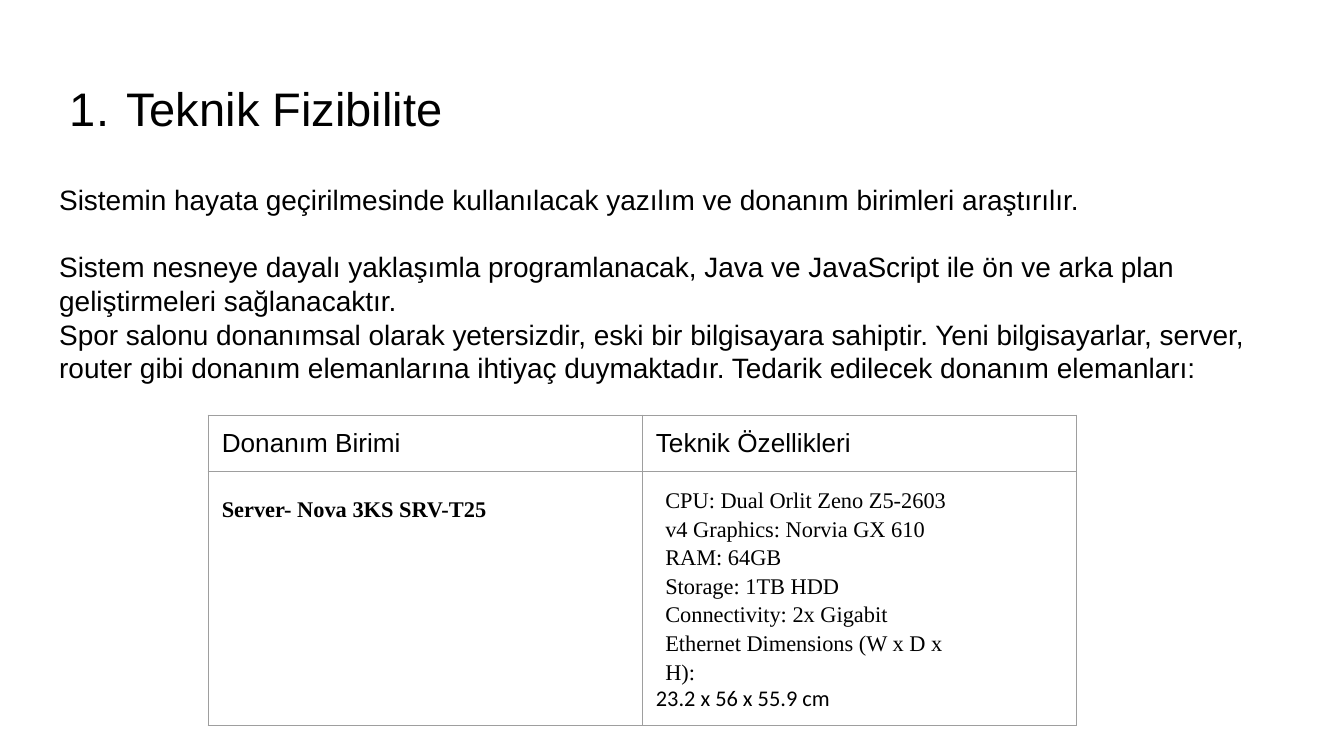
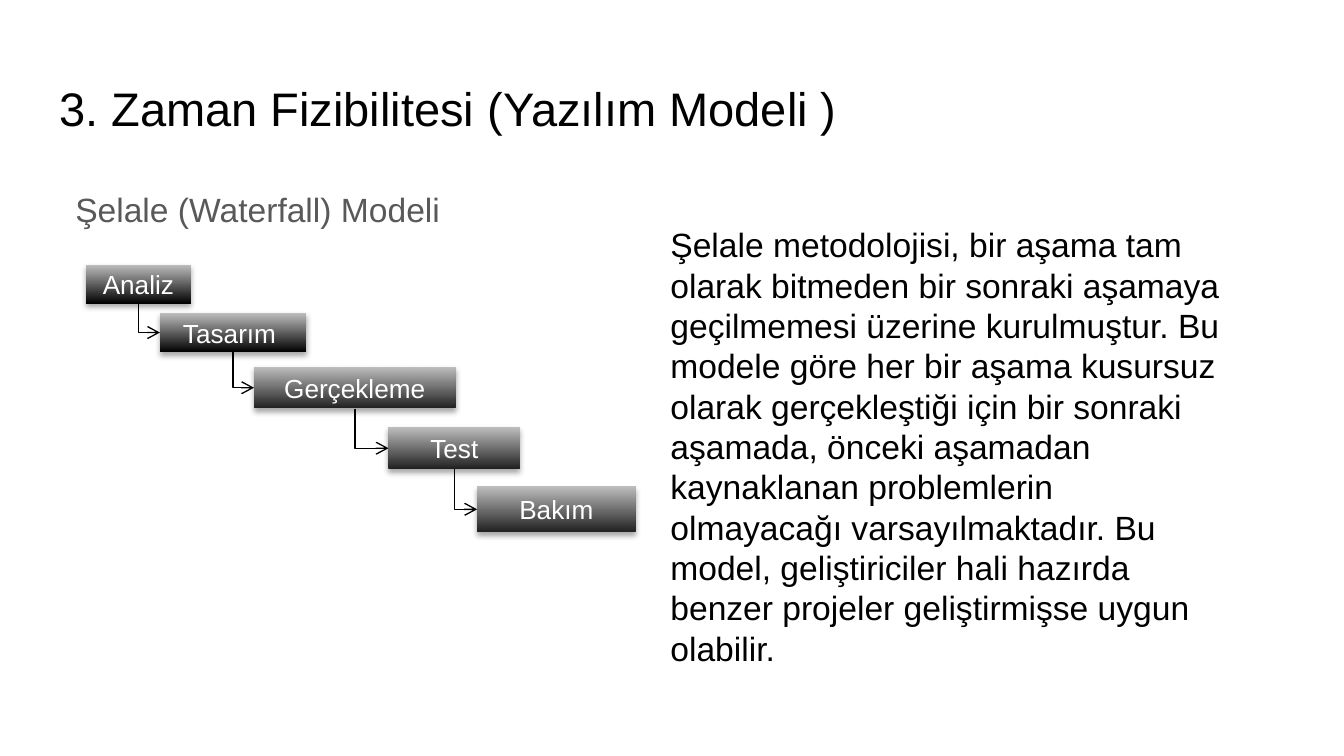
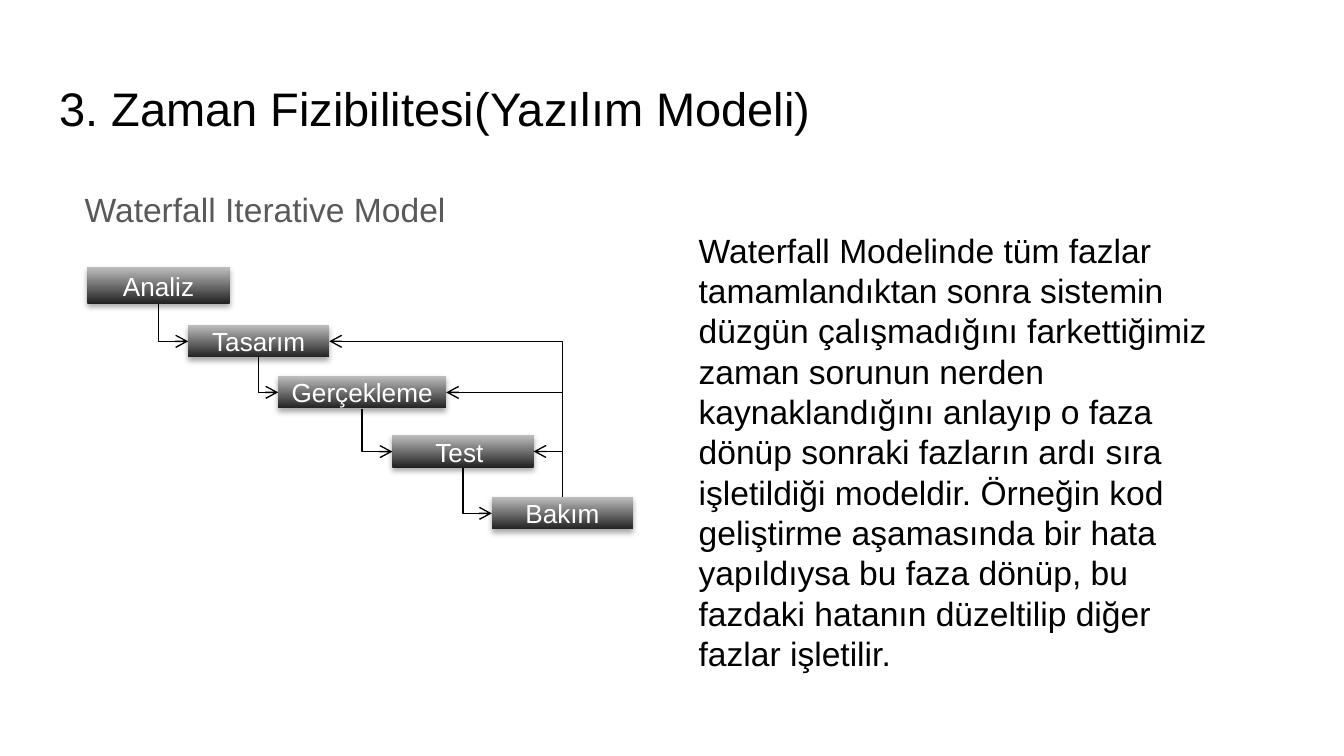
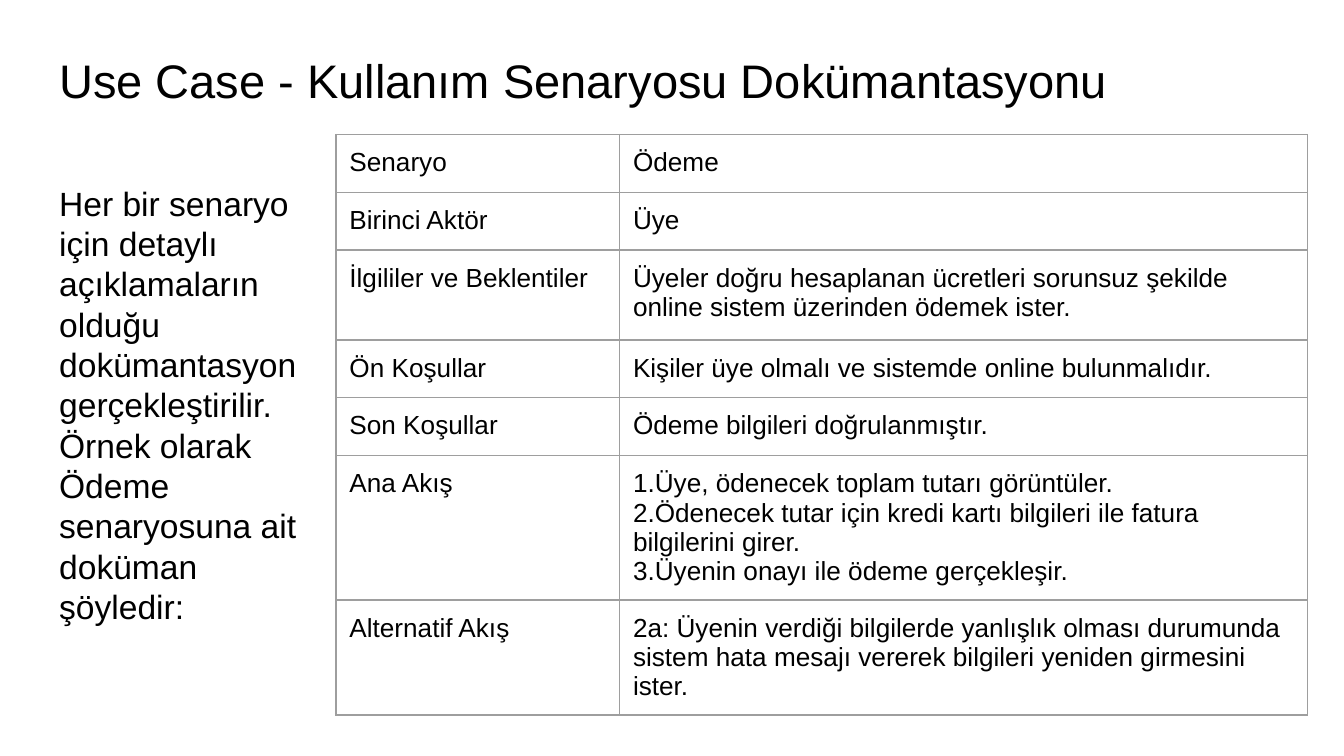
from dataclasses import dataclass
from typing import NamedTuple

from lxml import etree
from pptx import Presentation
from pptx.dml.color import RGBColor
from pptx.enum.shapes import MSO_CONNECTOR, MSO_SHAPE
from pptx.enum.text import MSO_ANCHOR, MSO_AUTO_SIZE, PP_ALIGN
from pptx.oxml.ns import qn
from pptx.util import Emu, Inches, Pt

ELBOW = MSO_CONNECTOR.ELBOW
RECTANGLE = MSO_SHAPE.RECTANGLE
TOP, MIDDLE = MSO_ANCHOR.TOP, MSO_ANCHOR.MIDDLE
NO_FIT, GROW = MSO_AUTO_SIZE.NONE, MSO_AUTO_SIZE.SHAPE_TO_FIT_TEXT
LEFT, CENTER, JUSTIFY = PP_ALIGN.LEFT, PP_ALIGN.CENTER, PP_ALIGN.JUSTIFY

COLORS = {
    "background": "FFFFFF",
    "text": "000000",
    "subtitle": "595959",
    "phase_text": "FFFFFF",
    "black": "000000",
    "charcoal": "212121",
    "silver": "BDBDBD",
    "border": "9E9E9E",
}
SANS, SERIF, CALIBRI = "Arial", "Times New Roman", "Calibri"
TITLE_AND_CONTENT = 1
TOP_SITE, LEFT_SITE, BOTTOM_SITE, RIGHT_SITE = range(4)
SLIDE_WIDTH = Inches(10)
SLIDE_HEIGHT = Emu(SLIDE_WIDTH * 9 // 16)
LINE_WIDTH = Pt(0.75)
INSET = Inches(0.1)


class Area(NamedTuple):
    left: float
    top: float
    width: float
    height: float

    def lengths(self) -> list:
        return [Inches(value) for value in self]


@dataclass
class Style:
    size: float
    font: str = SANS
    color: str = "text"
    bold: bool = False
    align: PP_ALIGN = LEFT
    spacing: float | None = None
    indent: float = 0
    right_indent: float = 0


@dataclass
class Phase:
    label: str
    area: Area
    shade: str = "charcoal"


TITLE_AREA = Area(0.34, 0.49, 9.32, 0.63)
BODY_AREA = Area(0.34, 1.26, 9.32, 3.74)

TITLE = Style(25.2)
INTRO = Style(15)
LARGE = Style(18)
SUBTITLE = Style(18, color="subtitle", spacing=1.15, indent=0.12)
CELL = Style(14)
PHASE = Style(14, color="phase_text", align=CENTER)
DEVICE = Style(12, SERIF, bold=True, align=JUSTIFY, spacing=1.5)
FEATURE = Style(12, SERIF, spacing=1.15, indent=0.07, right_indent=0.77)
DIMENSIONS = Style(12, CALIBRI)

INTRO_TEXT = [
    "Sistemin hayata geçirilmesinde kullanılacak yazılım ve donanım birimleri araştırılır.",
    "Sistem nesneye dayalı yaklaşımla programlanacak, Java ve JavaScript ile ön ve arka "
    "plan geliştirmeleri sağlanacaktır.",
    "Spor salonu donanımsal olarak yetersizdir, eski bir bilgisayara sahiptir. Yeni "
    "bilgisayarlar, server, router gibi donanım elemanlarına ihtiyaç duymaktadır. Tedarik "
    "edilecek donanım elemanları:",
]
HARDWARE = [
    ["Donanım Birimi", "Teknik Özellikleri"],
    [
        "Server- Nova 3KS SRV-T25",
        "CPU: Dual Orlit Zeno Z5-2603 v4 Graphics: Norvia GX 610\n"
        "RAM: 64GB\n"
        "Storage: 1TB HDD\n"
        "Connectivity: 2x Gigabit Ethernet Dimensions (W x D x H):\n"
        "23.2 x 56 x 55.9 cm",
    ],
]
WATERFALL_TEXT = (
    "Şelale metodolojisi, bir aşama tam olarak bitmeden bir sonraki aşamaya geçilmemesi "
    "üzerine kurulmuştur. Bu modele göre her bir aşama kusursuz olarak gerçekleştiği için "
    "bir sonraki aşamada, önceki aşamadan kaynaklanan problemlerin olmayacağı "
    "varsayılmaktadır. Bu model, geliştiriciler hali hazırda benzer projeler geliştirmişse "
    "uygun olabilir."
)
WATERFALL_PHASES = [
    Phase("Analiz", Area(0.64, 1.97, 0.78, 0.29), "black"),
    Phase("Tasarım ", Area(1.19, 2.33, 1.09, 0.29), "black"),
    Phase("Gerçekleme", Area(1.89, 2.73, 1.5, 0.31)),
    Phase("Test", Area(2.89, 3.18, 0.98, 0.31)),
    Phase("Bakım", Area(3.55, 3.62, 1.18, 0.34)),
]
ITERATIVE_TEXT = (
    "Waterfall Modelinde tüm fazlar tamamlandıktan sonra sistemin düzgün çalışmadığını "
    "farkettiğimiz zaman sorunun nerden kaynaklandığını anlayıp o faza dönüp sonraki "
    "fazların ardı sıra işletildiği modeldir. Örneğin kod geliştirme aşamasında bir hata "
    "yapıldıysa bu faza dönüp, bu fazdaki hatanın düzeltilip diğer fazlar işletilir."
)
ITERATIVE_PHASES = [
    Phase("Analiz", Area(0.65, 1.99, 1.06, 0.27)),
    Phase("Tasarım", Area(1.4, 2.42, 1.05, 0.24)),
    Phase("Gerçekleme", Area(2.07, 2.8, 1.25, 0.24)),
    Phase("Test ", Area(2.92, 3.24, 1.05, 0.24)),
    Phase("Bakım", Area(3.66, 3.7, 1.05, 0.24)),
]
SCENARIO_TEXT = [
    "Her bir senaryo için detaylı açıklamaların olduğu dokümantasyon gerçekleştirilir.",
    "Örnek olarak Ödeme senaryosuna ait doküman şöyledir:",
]
SCENARIO = [
    ["Senaryo", "Ödeme"],
    ["Birinci Aktör", "Üye"],
    ["İlgililer ve Beklentiler",
     "Üyeler doğru hesaplanan ücretleri sorunsuz şekilde online sistem üzerinden ödemek "
     "ister."],
    ["Ön Koşullar", "Kişiler üye olmalı ve sistemde online bulunmalıdır."],
    ["Son Koşullar", "Ödeme bilgileri doğrulanmıştır."],
    ["Ana Akış",
     "1.Üye, ödenecek toplam tutarı görüntüler.\n"
     "2.Ödenecek tutar için kredi kartı bilgileri ile fatura bilgilerini girer.\n"
     "3.Üyenin onayı ile ödeme gerçekleşir."],
    ["Alternatif Akış",
     "2a: Üyenin verdiği bilgilerde yanlışlık olması durumunda sistem hata mesajı vererek "
     "bilgileri yeniden girmesini ister."],
]


def rgb(name: str) -> RGBColor:
    return RGBColor.from_string(COLORS[name])


def add_xml(parent, tag: str, **attributes):
    return etree.SubElement(parent, qn(tag), {k: str(v) for k, v in attributes.items()})


def format_paragraph(paragraph, style: Style) -> None:
    paragraph.alignment = style.align
    paragraph.space_before = Pt(0)
    if style.spacing:
        paragraph.line_spacing = style.spacing
    properties = paragraph._p.get_or_add_pPr()
    properties.set("marL", str(Inches(style.indent)))
    properties.set("marR", str(Inches(style.right_indent)))
    properties.set("indent", "0")
    for run in paragraph.runs:
        run.font.size = Pt(style.size)
        run.font.name = style.font
        run.font.bold = style.bold
        run.font.color.rgb = rgb(style.color)


def write(frame, text: str, style: Style) -> None:
    frame.text = text
    for paragraph in frame.paragraphs:
        format_paragraph(paragraph, style)


def fill_placeholder(placeholder, area: Area, text: str, style: Style) -> None:
    placeholder.left, placeholder.top, placeholder.width, placeholder.height = area.lengths()
    frame = placeholder.text_frame
    write(frame, text, style)
    frame.auto_size = NO_FIT
    frame.word_wrap = True
    frame.vertical_anchor = TOP
    frame.margin_left = frame.margin_right = frame.margin_top = frame.margin_bottom = INSET
    for paragraph in frame.paragraphs:
        add_xml(paragraph._p.get_or_add_pPr(), "a:buNone")


def start_slide(deck, title: str, body: str, body_style: Style,
                title_area: Area = TITLE_AREA, body_area: Area = BODY_AREA):
    slide = deck.slides.add_slide(deck.slide_layouts[TITLE_AND_CONTENT])
    slide.background.fill.solid()
    slide.background.fill.fore_color.rgb = rgb("background")
    fill_placeholder(slide.shapes.title, title_area, title, TITLE)
    fill_placeholder(slide.placeholders[1], body_area, body, body_style)
    return slide


def number_title(title) -> None:
    """Give the title an automatic number in place of typed digits."""
    properties = title.text_frame.paragraphs[0]._p.get_or_add_pPr()
    properties.remove(properties.find(qn("a:buNone")))
    properties.set("marL", str(Inches(0.5)))
    properties.set("indent", str(Inches(-0.42)))
    add_xml(add_xml(properties, "a:buClr"), "a:srgbClr", val=COLORS["text"])
    add_xml(properties, "a:buFont", typeface=SANS)
    add_xml(properties, "a:buAutoNum", type="arabicPeriod")


def add_borders(cell) -> None:
    properties = cell._tc.get_or_add_tcPr()
    for position, side in enumerate(("a:lnL", "a:lnR", "a:lnT", "a:lnB")):
        border = add_xml(properties, side, w=LINE_WIDTH)
        add_xml(add_xml(border, "a:solidFill"), "a:srgbClr", val=COLORS["border"])
        properties.insert(position, border)


def add_grid(slide, area: Area, columns: list[float], heights: list[float],
             content: list[list[str]]):
    holder = slide.shapes.add_table(len(heights), len(columns), *area.lengths())
    table = holder.table
    table.first_row = table.horz_banding = False
    for column, width in zip(table.columns, columns):
        column.width = Inches(width)
    for row, height, texts in zip(table.rows, heights, content):
        row.height = Inches(height)
        for cell, text in zip(row.cells, texts):
            write(cell.text_frame, text, CELL)
            cell.margin_left = cell.margin_right = INSET
            cell.margin_top = cell.margin_bottom = INSET
            cell.fill.background()
            add_borders(cell)
    holder.height = Inches(area.height)
    return table


def add_phase(slide, phase: Phase):
    box = slide.shapes.add_shape(RECTANGLE, *phase.area.lengths())
    box.fill.gradient()
    box.fill.gradient_angle = 90
    for stop, color in zip(box.fill.gradient_stops, (phase.shade, "silver")):
        stop.color.rgb = rgb(color)
    box.line.fill.background()
    box.shadow.inherit = False
    effects = box._element.spPr.find(qn("a:effectLst"))
    shadow = add_xml(effects, "a:outerShdw", blurRad=Pt(3.1), dist=Pt(1.8),
                     dir=5400000, rotWithShape=0)
    add_xml(add_xml(shadow, "a:srgbClr", val=COLORS["black"]), "a:alpha", val=35000)
    frame = box.text_frame
    write(frame, phase.label, PHASE)
    frame.word_wrap = True
    frame.vertical_anchor = MIDDLE
    frame.margin_left = frame.margin_right = Inches(0.05)
    return box


def add_bent_arrow(slide, source, target, backward: bool = False) -> None:
    """Leave the source vertically, turn once and enter the target from the side."""
    x1 = source.left + source.width // 2
    y1 = source.top if backward else source.top + source.height
    x2 = target.left + target.width if backward else target.left
    y2 = target.top + target.height // 2
    arrow = slide.shapes.add_connector(ELBOW, x1, y1, x2, y2)
    arrow.begin_connect(source, TOP_SITE if backward else BOTTOM_SITE)
    arrow.end_connect(target, RIGHT_SITE if backward else LEFT_SITE)

    # A quarter turn swaps width and height around the same centre.
    width, height = abs(y2 - y1), abs(x2 - x1)
    arrow.left, arrow.top = Emu((x1 + x2 - width) // 2), Emu((y1 + y2 - height) // 2)
    arrow.width, arrow.height = Emu(width), Emu(height)
    properties = arrow._element.spPr
    frame = properties.find(qn("a:xfrm"))
    frame.set("rot", "16200000")
    frame.set("flipH", "0" if backward else "1")
    frame.set("flipV", "1" if backward else "0")
    properties.find(qn("a:prstGeom")).set("prst", "bentConnector2")

    arrow.line.color.rgb = rgb("black")
    arrow.line.width = LINE_WIDTH
    add_xml(arrow.line._get_or_add_ln(), "a:tailEnd", type="arrow")
    add_xml(properties, "a:effectLst")


def add_phases(slide, phases: list[Phase]) -> list:
    boxes = [add_phase(slide, phase) for phase in phases]
    for source, target in zip(boxes, boxes[1:]):
        add_bent_arrow(slide, source, target)
    return boxes


def add_explanation(slide, area: Area, text: str) -> None:
    frame = slide.shapes.add_textbox(*area.lengths()).text_frame
    frame.word_wrap = True
    frame.auto_size = GROW
    write(frame, text, LARGE)


def build_technical(deck) -> None:
    slide = start_slide(deck, "Teknik Fizibilite", "\n".join(INTRO_TEXT), INTRO)
    number_title(slide.shapes.title)
    slide.placeholders[1].text_frame.paragraphs[0].space_after = Pt(18)
    table = add_grid(slide, Area(1.55, 3.09, 6.46, 2.44), [3.23, 3.23], [0.4, 1.84], HARDWARE)
    format_paragraph(table.cell(1, 0).text_frame.paragraphs[0], DEVICE)
    *features, dimensions = table.cell(1, 1).text_frame.paragraphs
    for feature in features:
        format_paragraph(feature, FEATURE)
    format_paragraph(dimensions, DIMENSIONS)


def build_waterfall(deck) -> None:
    slide = start_slide(deck, "3. Zaman Fizibilitesi (Yazılım Modeli )",
                        "Şelale (Waterfall) Modeli", SUBTITLE)
    add_explanation(slide, Area(4.89, 1.62, 4.37, 3.43), WATERFALL_TEXT)
    add_phases(slide, WATERFALL_PHASES)


def build_iterative(deck) -> None:
    slide = start_slide(deck, "3. Zaman Fizibilitesi(Yazılım Modeli)",
                        " Waterfall Iterative Model", SUBTITLE)
    _, *earlier, maintenance = add_phases(slide, ITERATIVE_PHASES)
    for phase in reversed(earlier):
        add_bent_arrow(slide, maintenance, phase, backward=True)
    add_explanation(slide, Area(5.1, 1.66, 4.08, 3.43), ITERATIVE_TEXT)


def build_use_case(deck) -> None:
    slide = start_slide(deck, "Use Case - Kullanım Senaryosu Dokümantasyonu",
                        "\n".join(SCENARIO_TEXT), LARGE,
                        title_area=TITLE_AREA._replace(top=0.28),
                        body_area=BODY_AREA._replace(width=2.16))
    heights = [0.43, 0.43, 0.67, 0.43, 0.43, 0.43, 0.42]
    add_grid(slide, Area(2.5, 1, 7.23, 4.43), [2.11, 5.12], heights, SCENARIO)


def main() -> None:
    deck = Presentation()
    deck.slide_width, deck.slide_height = SLIDE_WIDTH, SLIDE_HEIGHT
    for build in (build_technical, build_waterfall, build_iterative, build_use_case):
        build(deck)
    deck.save("out.pptx")


if __name__ == "__main__":
    main()
